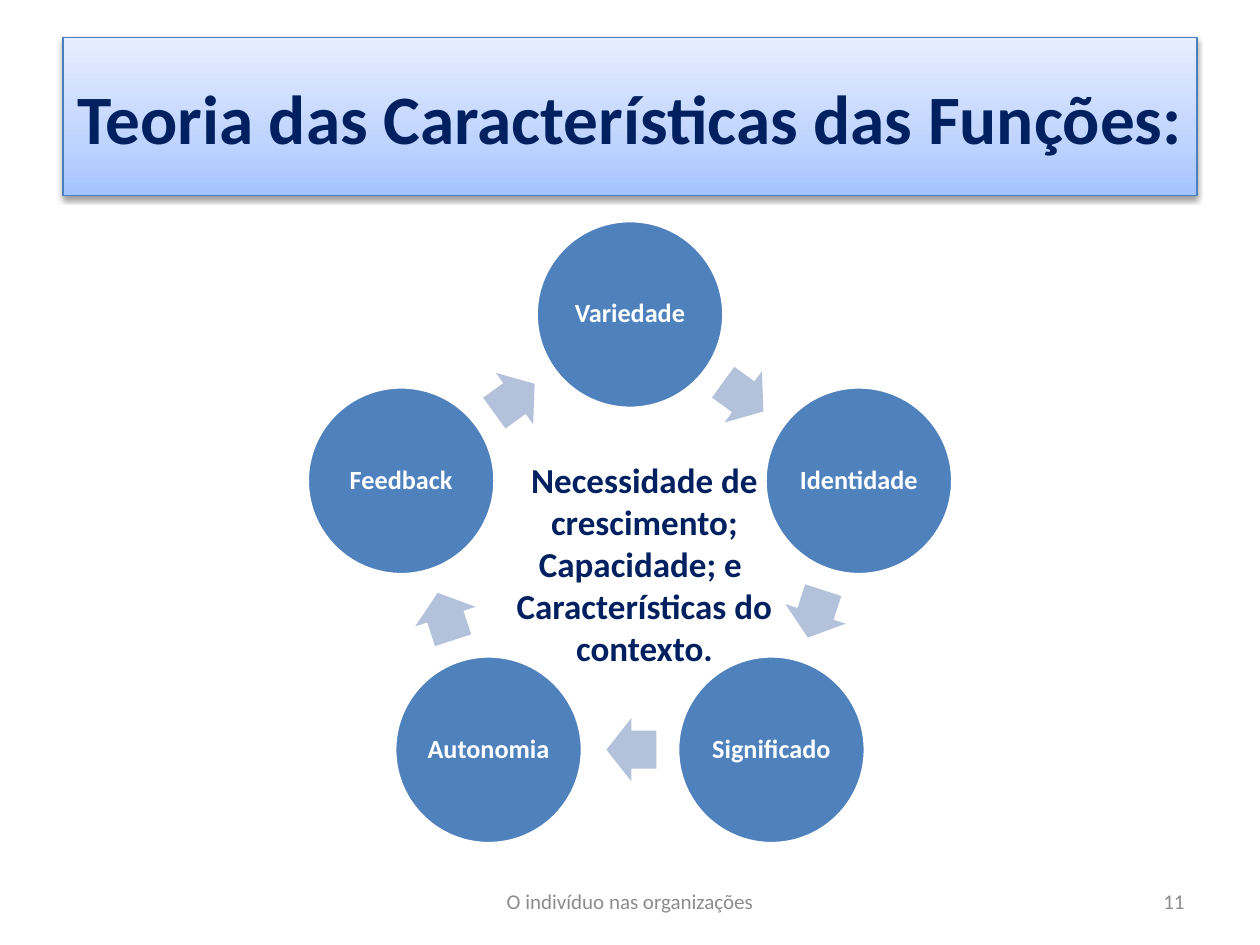
"""Builds the slide on the job characteristics theory: a cycle of five functions."""
from math import cos, radians, sin

from lxml.etree import SubElement
from pptx import Presentation
from pptx.dml.color import RGBColor
from pptx.enum.shapes import MSO_SHAPE as Shape
from pptx.enum.text import MSO_ANCHOR as Anchor, PP_ALIGN as Align
from pptx.oxml import parse_xml
from pptx.oxml.ns import nsdecls, qn
from pptx.util import Pt

TITLE = "Teoria das Características das Funções:"
FUNCTIONS = ["Variedade", "Identidade", "Significado", "Autonomia", "Feedback"]
CONTEXT = ["Necessidade de crescimento;", "Capacidade; e ", "Características do contexto."]
FOOTER = "O indivíduo nas organizações"
PAGE = "11"

COLORS = {"navy": "002060", "circle": "4F81BD", "arrow": "B3C1DB", "white": "FFFFFF",
          "gray": "8C8C8C", "border": "4B7EBC", "shadow": "000000"}
TITLE_STOPS = [(0, "A4C4FF"), (35, "BFD4FF"), (100, "E6EEFF")]
FONT = "Calibri"

CENTER_X, CENTER_Y = 360, 317.2
RING_RADIUS, ARROW_RADIUS = 137.5, 111.2
CIRCLE_SIZE, ARROW_LENGTH, ARROW_HEIGHT = 107.3, 28.5, 36.2
STEP = 360 / len(FUNCTIONS)
ARROW_LAG = 0.4


def rgb(name):
    return RGBColor.from_string(COLORS[name])


def write(shape, lines, size, color, bold=False, align=Align.CENTER, anchor=Anchor.MIDDLE):
    frame = shape.text_frame
    frame.word_wrap = True
    frame.vertical_anchor = anchor
    for index, line in enumerate(lines):
        paragraph = frame.add_paragraph() if index else frame.paragraphs[0]
        paragraph.alignment = align
        run = paragraph.add_run()
        run.text = line
        run.font.name = FONT
        run.font.size = Pt(size)
        run.font.bold = bold
        run.font.color.rgb = rgb(color)


def add_text(slide, box, *args, **options):
    write(slide.shapes.add_textbox(*map(Pt, box)), *args, **options)


def add_title(slide):
    title = slide.shapes.add_shape(Shape.RECTANGLE, Pt(36), Pt(21.6), Pt(648), Pt(90))
    title.line.color.rgb = rgb("border")
    title.line.width = Pt(0.75)
    stops = "".join(f'<a:gs pos="{position * 1000}"><a:srgbClr val="{color}"/></a:gs>'
                    for position, color in TITLE_STOPS)
    gradient = parse_xml(f'<a:gradFill {nsdecls("a")} rotWithShape="1"><a:gsLst>{stops}</a:gsLst>'
                         '<a:lin ang="16200000" scaled="0"/></a:gradFill>')
    properties = title.element.spPr
    properties.find(qn("a:prstGeom")).addnext(gradient)
    effects = SubElement(properties, qn("a:effectLst"))
    shadow = SubElement(effects, qn("a:outerShdw"), blurRad=str(Pt(3.1)), dist=str(Pt(1.6)),
                        dir="5400000", rotWithShape="0")
    shade = SubElement(shadow, qn("a:srgbClr"), val=COLORS["shadow"])
    SubElement(shade, qn("a:alpha"), val="38000")
    write(title, [TITLE], 39.6, "navy", bold=True)


def add_on_ring(group, kind, radius, angle, width, height, color):
    x = CENTER_X + radius * sin(radians(angle))
    y = CENTER_Y - radius * cos(radians(angle))
    shape = group.shapes.add_shape(kind, Pt(x - width / 2), Pt(y - height / 2),
                                   Pt(width), Pt(height))
    shape.shadow.inherit = False
    shape.fill.solid()
    shape.fill.fore_color.rgb = rgb(color)
    return shape


def add_cycle(slide):
    group = slide.shapes.add_group_shape()
    for index, name in enumerate(FUNCTIONS):
        angle = index * STEP
        circle = add_on_ring(group, Shape.OVAL, RING_RADIUS, angle,
                             CIRCLE_SIZE, CIRCLE_SIZE, "circle")
        circle.line.color.rgb = rgb("white")
        circle.line.width = Pt(2)
        frame = circle.text_frame
        frame.margin_left = frame.margin_right = frame.margin_top = frame.margin_bottom = Pt(1.5)
        write(circle, [name], 15, "white", bold=True)
        frame.paragraphs[0].line_spacing = 0.9

        middle = angle + STEP / 2
        arrow = add_on_ring(group, Shape.RIGHT_ARROW, ARROW_RADIUS, middle - ARROW_LAG,
                            ARROW_LENGTH, ARROW_HEIGHT, "arrow")
        arrow.rotation = middle
        arrow.adjustments[0], arrow.adjustments[1] = 0.6, 0.5
        arrow.line.fill.background()


def main():
    presentation = Presentation()
    presentation.slide_width, presentation.slide_height = Pt(720), Pt(540)
    slide = presentation.slides.add_slide(presentation.slide_layouts[6])
    add_title(slide)
    add_cycle(slide)
    add_text(slide, (246, 500.5, 228, 28.75), [FOOTER], 12, "gray")
    add_text(slide, (516, 500.5, 168, 28.75), [PAGE], 12, "gray", align=Align.RIGHT)
    add_text(slide, (275, 258.5, 186.5, 128), CONTEXT, 20, "navy", bold=True, anchor=Anchor.TOP)
    presentation.save("out.pptx")


if __name__ == "__main__":
    main()
